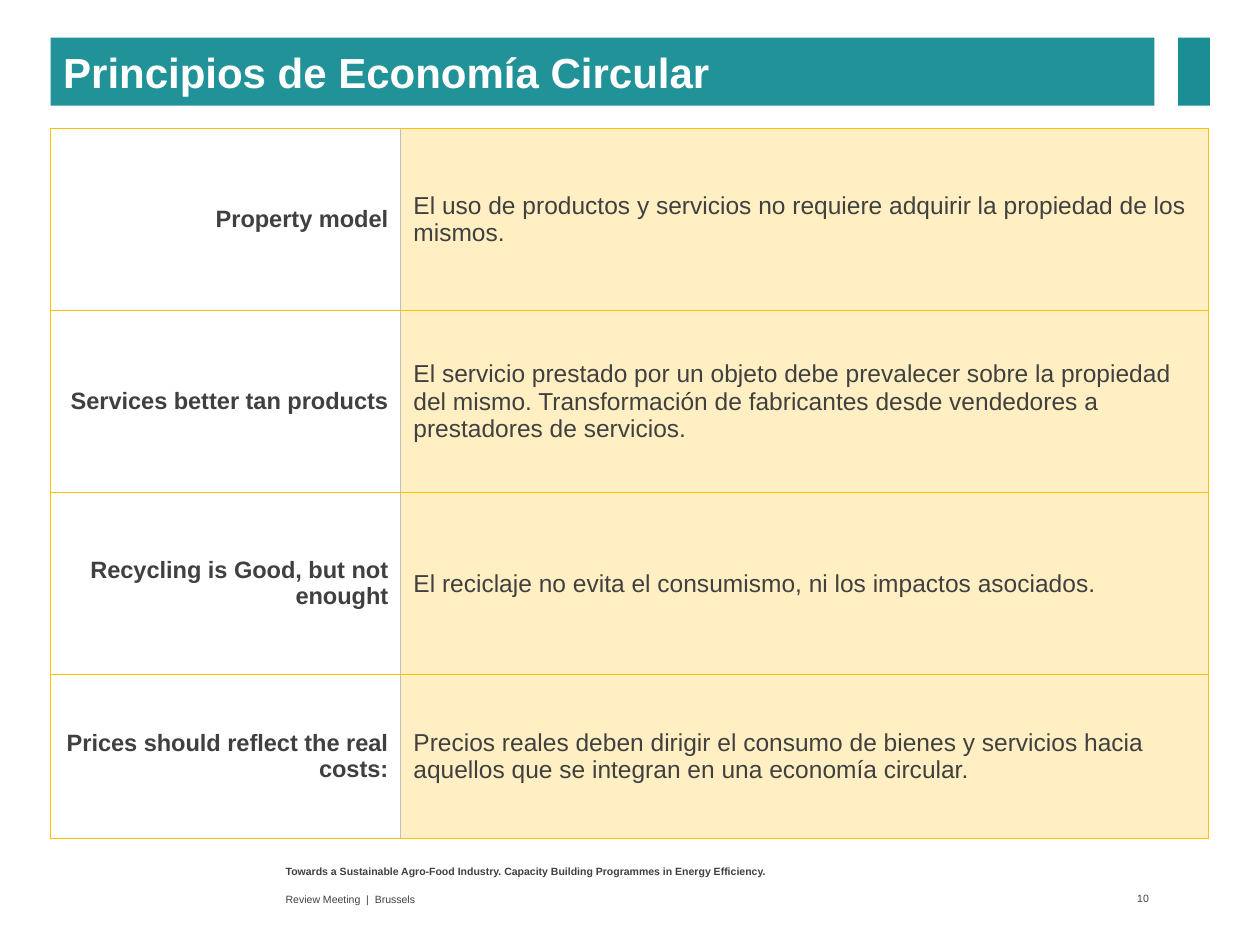
from dataclasses import dataclass
from typing import NamedTuple

from lxml import etree
from pptx import Presentation
from pptx import util as u
from pptx.dml.color import RGBColor
from pptx.enum import shapes, text
from pptx.oxml.ns import qn


@dataclass(frozen=True)
class Theme:
    font: str = "Arial"
    ink: str = "404040"
    white: str = "FFFFFF"
    banner: str = "209298"
    accent: str = "1B8E95"
    gold: str = "FFC000"
    divider: str = "BFBFBF"
    tint_percent: int = 24
    title_size: float = 24
    label_size: float = 13.5
    body_size: float = 14
    footer_size: float = 6


class Box(NamedTuple):
    left: float
    top: float
    width: float
    height: float

    def lengths(self) -> list:
        return [u.Cm(value) for value in self]


class Principle(NamedTuple):
    label: str
    description: str
    height: float


class FooterItem(NamedTuple):
    wording: str
    box: Box
    bold: bool = False
    anchor: text.MSO_ANCHOR = text.MSO_ANCHOR.MIDDLE
    align: text.PP_ALIGN = text.PP_ALIGN.LEFT
    right_inset: float = 0.25


THEME = Theme()
TITLE_BOX = Box(1.02, 0.76, 22.25, 1.37)
ACCENT_BOX = Box(23.75, 0.76, 0.64, 1.37)
COLUMN_WIDTHS = (7.06, 16.28)
TABLE_LEFT, TABLE_TOP = 1.02, 2.59

PRINCIPLES = [
    Principle("Property model",
              "El uso de productos y servicios no requiere adquirir la propiedad "
              "de los mismos.", 3.67),
    Principle("Services better tan products",
              "El servicio prestado por un objeto debe prevalecer sobre la propiedad "
              "del mismo. Transformación de fabricantes desde vendedores a "
              "prestadores de servicios.", 3.67),
    Principle("Recycling is Good, but not enought",
              "El reciclaje no evita el consumismo, ni los impactos asociados.", 3.67),
    Principle("Prices should reflect the real costs:",
              "Precios reales deben dirigir el consumo de bienes y servicios hacia "
              "aquellos que se integran en una economía circular.", 3.3),
]

FOOTER = [
    FooterItem("Towards a Sustainable Agro-Food Industry. Capacity Building "
               "Programmes in Energy Efficiency.",
               Box(5.51, 17.32, 13.97, 0.53), bold=True, anchor=text.MSO_ANCHOR.TOP),
    FooterItem("Review Meeting\u00a0 |\u00a0 Brussels".replace("\u00a0", " "),
               Box(5.51, 17.88, 13.97, 0.48)),
    FooterItem("10", Box(21.84, 17.86, 1.42, 0.51),
               align=text.PP_ALIGN.RIGHT, right_inset=0.1),
]


def write(frame, wording: str, size: float, color: str = THEME.ink,
          bold: bool = False, align=text.PP_ALIGN.LEFT) -> None:
    frame.text = wording
    frame.word_wrap = True
    para = frame.paragraphs[0]
    para.alignment = align
    font = para.runs[0].font
    font.name, font.size, font.bold = THEME.font, u.Pt(size), bold
    font.color.rgb = RGBColor.from_string(color)


def paint(fill, color: str) -> None:
    fill.solid()
    fill.fore_color.rgb = RGBColor.from_string(color)


def add_border(properties, side: str, color: str, points: float) -> None:
    line = etree.SubElement(properties, qn(f"a:{side}"), w=str(u.Pt(points)))
    solid = etree.SubElement(line, qn("a:solidFill"))
    etree.SubElement(solid, qn("a:srgbClr"), val=color)


def format_cell(cell, is_label: bool) -> None:
    """Give a cell its borders first, then its fill, as the schema orders them."""
    properties = cell._tc.get_or_add_tcPr()
    divider_side = "lnR" if is_label else "lnL"
    for side in ("lnL", "lnR", "lnT", "lnB"):
        if side == divider_side:
            add_border(properties, side, THEME.divider, 0.5)
        else:
            add_border(properties, side, THEME.gold, 1)
    paint(cell.fill, THEME.white if is_label else THEME.gold)
    if not is_label:
        color = properties.find(f"{qn('a:solidFill')}/{qn('a:srgbClr')}")
        etree.SubElement(color, qn("a:alpha"), val=str(THEME.tint_percent * 1000))
    cell.vertical_anchor = text.MSO_ANCHOR.MIDDLE


def add_title(page, wording: str) -> None:
    title = page.shapes.title
    title.left, title.top, title.width, title.height = TITLE_BOX.lengths()
    paint(title.fill, THEME.banner)
    frame = title.text_frame
    write(frame, wording, THEME.title_size, THEME.white, bold=True)
    frame.auto_size = text.MSO_AUTO_SIZE.NONE
    frame.vertical_anchor = text.MSO_ANCHOR.MIDDLE


def add_accent(page) -> None:
    accent = page.shapes.add_shape(shapes.MSO_SHAPE.RECTANGLE, *ACCENT_BOX.lengths())
    accent.shadow.inherit = False
    paint(accent.fill, THEME.accent)
    accent.line.fill.background()


def add_principles(page) -> None:
    area = Box(TABLE_LEFT, TABLE_TOP, sum(COLUMN_WIDTHS),
               sum(principle.height for principle in PRINCIPLES))
    table = page.shapes.add_table(
        len(PRINCIPLES), len(COLUMN_WIDTHS), *area.lengths()).table
    table.first_row = table.horz_banding = False
    for column, width in zip(table.columns, COLUMN_WIDTHS):
        column.width = u.Cm(width)
    for row, principle in zip(table.rows, PRINCIPLES):
        row.height = u.Cm(principle.height)
        label, description = row.cells
        format_cell(label, is_label=True)
        format_cell(description, is_label=False)
        write(label.text_frame, principle.label, THEME.label_size,
              bold=True, align=text.PP_ALIGN.RIGHT)
        write(description.text_frame, principle.description, THEME.body_size)


def add_footer_item(page, item: FooterItem) -> None:
    frame = page.shapes.add_textbox(*item.box.lengths()).text_frame
    write(frame, item.wording, THEME.footer_size, bold=item.bold, align=item.align)
    frame.vertical_anchor = item.anchor
    frame.margin_right = u.Cm(item.right_inset)


def main() -> None:
    deck = Presentation()
    deck.slide_width, deck.slide_height = u.Cm(25.4), u.Cm(19.05)
    page = deck.slides.add_slide(deck.slide_layouts.get_by_name("Title Only"))
    add_title(page, "Principios de Economía Circular")
    add_accent(page)
    add_principles(page)
    for item in FOOTER:
        add_footer_item(page, item)
    deck.save("out.pptx")


if __name__ == "__main__":
    main()
